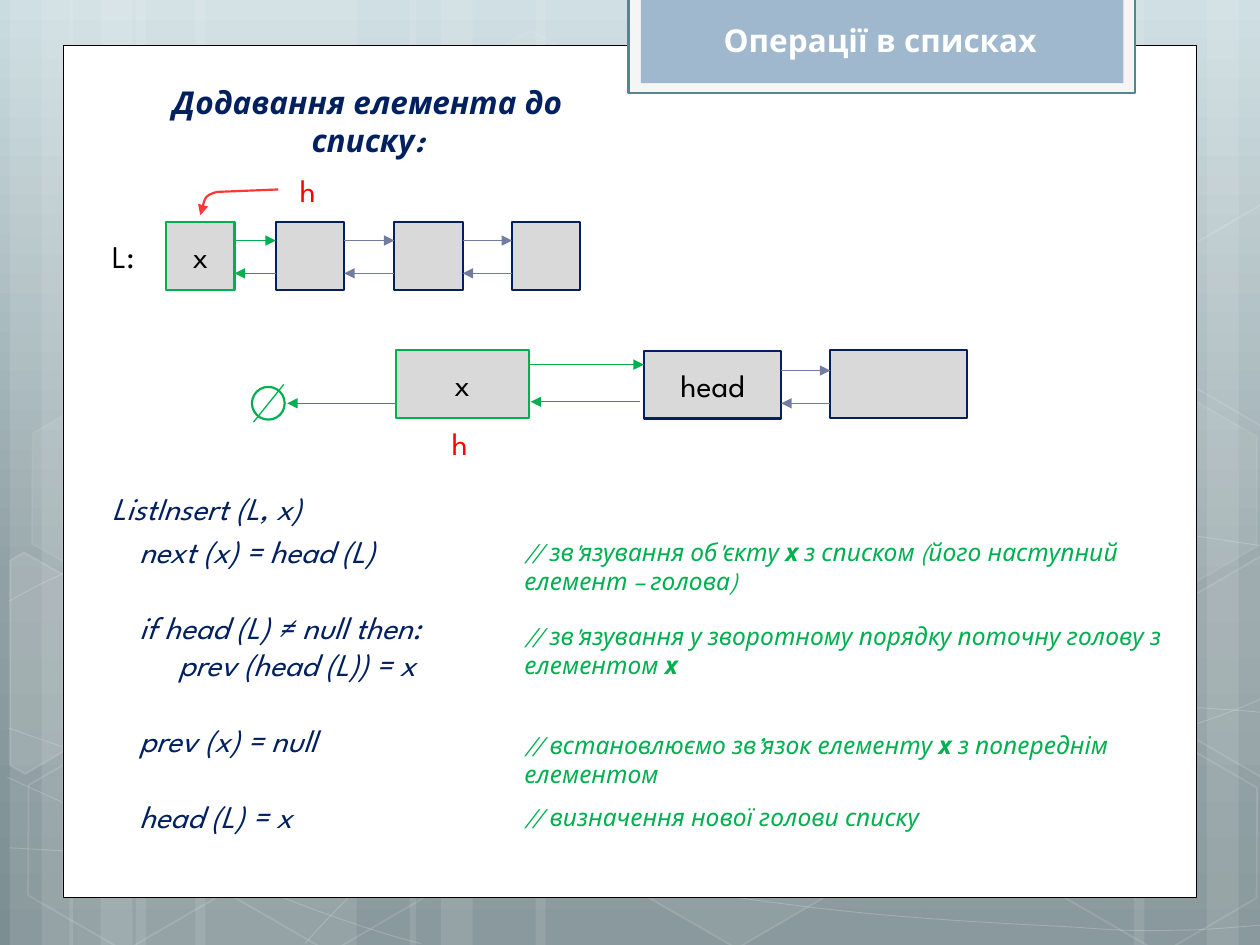
import copy
import math
from dataclasses import dataclass

import pptx
import pptx.dml.color
import pptx.enum.shapes
import pptx.enum.text
import pptx.oxml
import pptx.oxml.ns
import pptx.util

Cm, Pt = pptx.util.Cm, pptx.util.Pt
RGB = pptx.dml.color.RGBColor.from_string
SHAPE = pptx.enum.shapes.MSO_SHAPE
ALIGN = pptx.enum.text.PP_ALIGN
NS = pptx.oxml.ns.nsdecls("a")


@dataclass(frozen=True)
class Theme:
    font: str = "League Spartan"
    body: float = 18
    note: float = 14
    white: str = "FFFFFF"
    black: str = "000000"
    navy: str = "002060"
    green: str = "00B050"
    red: str = "FF0000"
    pointer: str = "FF3737"
    link: str = "727CA3"
    cell: str = "D9D9D9"
    tab: str = "9FB8CD"
    tab_edge: str = "F5F5F5"
    tab_line: str = "528693"
    sky: tuple = ((0, "CBDCE0"), (0.62, "90A0A4"), (1, "7D8E92"))


T = Theme()

# x and width of the light vertical bands
BANDS = [(2.74, 4.45), (0.2, 1.27), (0.84, 2.11), (3.94, 4.45), (1.4, 1.27), (2.03, 2.11),
         (18.62, 4.45), (24.33, 1.27), (22.86, 2.11), (10.8, 7.82), (8.26, 1.27), (8.89, 2.11)]

# Each curve: a start point, then two controls and an end point per segment
CURVES = [
    [(0.18, 17.09), (1.55, 17.17), (2.92, 17.25), (4.83, 17.22), (6.73, 17.2), (9.09, 17.15),
     (11.63, 16.89), (14.17, 16.64), (17.78, 16.15), (20.12, 15.67), (22.43, 15.19),
     (24.82, 14.43), (25.58, 14)],
    [(0.18, 12.12), (0.91, 11.71), (1.65, 11.33), (3.07, 10.95), (4.52, 10.57), (6.58, 10.01),
     (8.81, 9.83), (11.07, 9.65), (13.82, 9.63), (16.61, 9.83), (19.41, 10.03),
     (24.05, 10.82), (25.58, 11.02)],
    [(0.15, 15.67), (3.23, 17.07), (6.27, 18.47), (8.48, 19.02)],
    [(0.18, 14.68), (0.97, 14.96), (1.78, 15.24), (3.25, 15.65), (4.78, 16.03), (6.93, 16.66),
     (9.07, 17.09), (11.18, 17.53), (13.84, 17.98), (15.95, 18.24), (18.06, 18.52),
     (20.32, 18.62), (21.67, 18.69), (22.99, 18.8), (23.34, 18.75), (24, 18.75),
     (24.66, 18.72), (25.12, 18.67), (25.58, 18.64)],
    [(6.15, 19.02), (6.6, 18.52), (7.06, 18.01), (7.67, 17.55), (8.28, 17.09), (9.14, 16.59),
     (9.86, 16.23), (10.57, 15.88), (11, 15.72), (11.94, 15.47), (12.85, 15.21),
     (14.55, 14.86), (15.44, 14.68), (16.36, 14.5), (16.48, 14.5), (17.27, 14.45),
     (18.06, 14.38), (19.3, 14.3), (20.17, 14.27), (21.06, 14.25), (22.5, 14.27),
     (22.5, 14.27), (22.5, 14.27), (24.21, 14.27), (24.21, 14.27), (24.66, 14.3),
     (25.1, 14.33), (25.32, 14.35), (25.55, 14.38), (25.48, 14.35), (25.55, 14.38)],
]
H_POINTER = [(5.61, 3.82), (5.61, 3.82), (4.37, 3.87), (4.37, 3.87),
             (4.11, 3.94), (4.09, 4.15), (4.04, 4.34)]

# x, y, fill opacity, line opacity (percent)
HEXAGONS = [(8.48, 0.91, 4, 8), (12.62, 14.96, 6, 12), (0.28, 15.01, None, 12),
            (0.36, 7.92, 7, 8), (4.42, 15.04, None, 12), (19.13, 11.51, 10, 12),
            (21.18, 15.06, None, 12), (21.18, 7.98, 7, 8)]
LEFT_HEXAGON = [(0.2, 11.3), (0.48, 11.13), (2.44, 12.24), (2.41, 14.48), (0.51, 15.6), (0.2, 15.42)]
RIGHT_HEXAGON = [(23.52, 12.32), (25.43, 11.2), (25.63, 11.33), (25.63, 15.57),
                 (25.45, 15.67), (23.52, 14.55)]

# text, left indent, space before
CODE = [("next (x) = head (L)", 0, 0), ("if head (L) ≠ null then:", 0, 21.6),
        ("prev (head (L)) = x", 0.79, 0), ("prev (x) = null", 0, 21.6), ("head (L) = x", 0, 21.6)]

# y, height, text with bold parts between asterisks
NOTES = [
    (10.7, 1.45, "// зв'язування об'єкту *х* з списком (його наступний елемент – голова)"),
    (12.39, 1.45, "// зв'язування у зворотному порядку поточну голову з елементом *х*"),
    (14.59, 1.45, "// встановлюємо зв’язок елементу *х *з попереднім елементом"),
    (16.04, 0.86, "// визначення нової голови списку"),
]


def set_alpha(fill, percent):
    fill_xml = fill._xPr.find(pptx.oxml.ns.qn("a:solidFill"))
    fill_xml[0].append(pptx.oxml.parse_xml(f'<a:alpha {NS} val="{percent * 1000}"/>'))


def paint(sp, fill=None, line=None, width=1.25, fill_alpha=None, line_alpha=None):
    sp.shadow.inherit = False
    for target, color, alpha in ((sp.fill, fill, fill_alpha), (sp.line.fill, line, line_alpha)):
        if color is None:
            target.background()
            continue
        target.solid()
        target.fore_color.rgb = RGB(color)
        if alpha:
            set_alpha(target, alpha)
    if line:
        sp.line.width = Pt(width)
    return sp


def add_arrowhead(sp):
    sp.line._get_or_add_ln().append(pptx.oxml.parse_xml(f'<a:tailEnd {NS} type="triangle"/>'))


def add_shape(s, x, y, w, h, kind=SHAPE.RECTANGLE, **style):
    return paint(s.shapes.add_shape(kind, Cm(x), Cm(y), Cm(w), Cm(h)), **style)


def add_outline(s, points, close=False, **style):
    builder = s.shapes.build_freeform(*(Cm(v) for v in points[0]), scale=1.0)
    builder.add_line_segments([(Cm(x), Cm(y)) for x, y in points[1:]], close=close)
    return paint(builder.convert_to_shape(), **style)


def add_turned_outline(s, points, center, angle, **style):
    """Draw a closed outline as a shape turned by angle around its own center."""
    cx, cy = center
    cos, sin = math.cos(math.radians(angle)), math.sin(math.radians(angle))
    level = [(cx + (x - cx) * cos + (y - cy) * sin, cy - (x - cx) * sin + (y - cy) * cos)
             for x, y in points]
    add_outline(s, level, close=True, **style).rotation = angle


def add_curve(s, points, **style):
    """Join the anchors, then bend each side that has its own control points."""
    sp = add_outline(s, points[::3], **style)
    for i, side in enumerate(sp._element.xpath(".//a:lnTo")):
        start, control_1, control_2, end = points[3 * i:3 * i + 4]
        if (control_1, control_2) == (start, end):
            continue
        pts = "".join(f'<a:pt x="{Cm(x) - sp.left}" y="{Cm(y) - sp.top}"/>'
                      for x, y in (control_1, control_2, end))
        side.getparent().replace(
            side, pptx.oxml.parse_xml(f"<a:cubicBezTo {NS}>{pts}</a:cubicBezTo>"))
    return sp


def add_line(s, x1, y1, x2, y2, color, width=0.75, arrow=True):
    cxn = s.shapes.add_connector(pptx.enum.shapes.MSO_CONNECTOR.STRAIGHT,
                                 Cm(x1), Cm(y1), Cm(x2), Cm(y2))
    cxn.line.color.rgb = RGB(color)
    cxn.line.width = Pt(width)
    if arrow:
        add_arrowhead(cxn)
    cxn._element.spPr.append(pptx.oxml.parse_xml(f"<a:effectLst {NS}/>"))


def add_double_link(s, x1, x2, y_next, y_prev, color):
    add_line(s, x1, y_next, x2, y_next, color)
    add_line(s, x2, y_prev, x1, y_prev, color)


def write(p, text, color, size=T.body, align=ALIGN.LEFT, bold=False, italic=False):
    """Fill a paragraph; parts between asterisks are bold."""
    p.alignment = align
    for i, part in enumerate(text.split("*")):
        if part:
            r = p.add_run()
            r.text = part
            r.font.name, r.font.size = T.font, Pt(size)
            r.font.bold, r.font.italic = bold or i % 2 == 1, italic
            r.font.color.rgb = RGB(color)


def add_text(s, x, y, w, h, text, color, wrap=True, **style):
    tf = s.shapes.add_textbox(Cm(x), Cm(y), Cm(w), Cm(h)).text_frame
    tf.word_wrap = wrap
    tf.auto_size = pptx.enum.text.MSO_AUTO_SIZE.SHAPE_TO_FIT_TEXT
    write(tf.paragraphs[0], text, color, **style)
    return tf


def add_cell(s, x, y, w, color=T.navy, text=""):
    sp = add_shape(s, x, y, w, 1.37, fill=T.cell, line=color)
    sp.text_frame.vertical_anchor = pptx.enum.text.MSO_ANCHOR.MIDDLE
    write(sp.text_frame.paragraphs[0], text, T.black, align=ALIGN.CENTER)


def add_background(s):
    fill = s.background.fill
    fill.gradient()
    fill.gradient_angle = 270
    stops = s.element.xpath(".//a:gsLst")[0]
    stops.append(copy.deepcopy(stops[0]))
    for stop, (position, color) in zip(fill.gradient_stops, T.sky):
        stop.position = position
        stop.color.rgb = RGB(color)
    for x, w in BANDS:
        add_shape(s, x, 0, w, 19.05, fill=T.white, fill_alpha=10)
    for points in CURVES:
        add_curve(s, points, line=T.white, width=0.5, line_alpha=20)
    for x, y, fill_alpha, line_alpha in HEXAGONS:
        sp = add_shape(s, x, y, 4.45, 3.86, SHAPE.HEXAGON, fill=T.white if fill_alpha else None,
                       line=T.white, width=1, fill_alpha=fill_alpha, line_alpha=line_alpha)
        sp.adjustments[0], sp.adjustments[1] = 0.285, 1.155
        sp.rotation = 30
    upper_right = [(x, y - 7.08) for x, y in RIGHT_HEXAGON]
    for points, center, alpha in ((LEFT_HEXAGON, (0.91, 13.59), 10),
                                  (RIGHT_HEXAGON, (25.02, 13.21), 4),
                                  (upper_right, (25.02, 6.13), None)):
        add_turned_outline(s, points, center, 30, fill=T.white if alpha else None,
                           line=T.white, width=1, fill_alpha=alpha, line_alpha=12)


def add_panel(s):
    add_shape(s, 1.27, 0.91, 22.86, 17.19, fill=T.white, line=T.black, width=0.5)
    add_shape(s, 12.67, -0.05, 10.21, 1.93, fill=T.tab_edge, line=T.tab_line)
    add_shape(s, 12.92, -0.05, 9.73, 1.73, fill=T.tab)
    add_text(s, 14.33, 0.3, 6.83, 1.02, "Операції в списках", T.white, wrap=False,
             align=ALIGN.CENTER, bold=True)
    add_text(s, 3.03, 1.55, 8.76, 1.8, "Додавання елемента до списку:", T.navy,
             align=ALIGN.CENTER, bold=True, italic=True)


def add_list_diagram(s):
    size, lefts = 1.38, (3.35, 5.56, 7.95, 10.32)
    add_text(s, 2.01, 4.65, 0.99, 1.02, "L:", T.black, wrap=False)
    for i, x in enumerate(lefts):
        add_cell(s, x, 4.47, size, T.navy if i else T.green, "" if i else "x")
    for i, (x, following) in enumerate(zip(lefts, lefts[1:])):
        add_double_link(s, x + size, following, 4.85, 5.51, T.link if i else T.green)
    add_text(s, 5.67, 3.33, 1.07, 1.02, "h", T.red, align=ALIGN.CENTER)
    add_arrowhead(add_curve(s, H_POINTER, line=T.pointer))


def add_head_diagram(s):
    add_cell(s, 7.98, 7.06, 2.68, T.green, "x")
    add_cell(s, 12.98, 7.07, 2.77, text="head")
    add_cell(s, 16.73, 7.06, 2.77)
    add_line(s, 10.67, 7.35, 12.98, 7.35, T.green)
    add_line(s, 12.9, 8.1, 10.7, 8.1, T.green)
    add_double_link(s, 15.75, 16.74, 7.47, 8.13, T.link)
    add_shape(s, 5.08, 7.8, 0.66, 0.66, SHAPE.OVAL, line=T.green)
    add_line(s, 5.72, 7.75, 5.11, 8.51, T.green, arrow=False)
    add_line(s, 7.98, 8.13, 5.79, 8.13, T.green)
    add_text(s, 8.73, 8.42, 1.07, 1.02, "h", T.red, align=ALIGN.CENTER)


def add_algorithm(s):
    style = dict(color=T.navy, align=ALIGN.JUSTIFY, italic=True)
    add_text(s, 2.01, 9.73, 12.17, 1.02, "ListInsert (L, x)", **style)
    tf = add_text(s, 2.56, 10.6, 9.47, 6.4, CODE[0][0], **style)
    for text, indent, gap in CODE[1:]:
        p = tf.add_paragraph()
        write(p, text, **style)
        p.space_before = Pt(gap)
        p._p.get_or_add_pPr().set("marL", str(Cm(indent)))
    for y, h, text in NOTES:
        add_text(s, 10.32, y, 13.77, h, text, T.green, size=T.note, italic=True)


def main():
    prs = pptx.Presentation()
    prs.slide_width, prs.slide_height = Cm(25.4), Cm(19.05)
    s = prs.slides.add_slide(prs.slide_layouts[6])
    for add_part in (add_background, add_panel, add_list_diagram, add_head_diagram, add_algorithm):
        add_part(s)
    prs.save("out.pptx")


if __name__ == "__main__":
    main()
